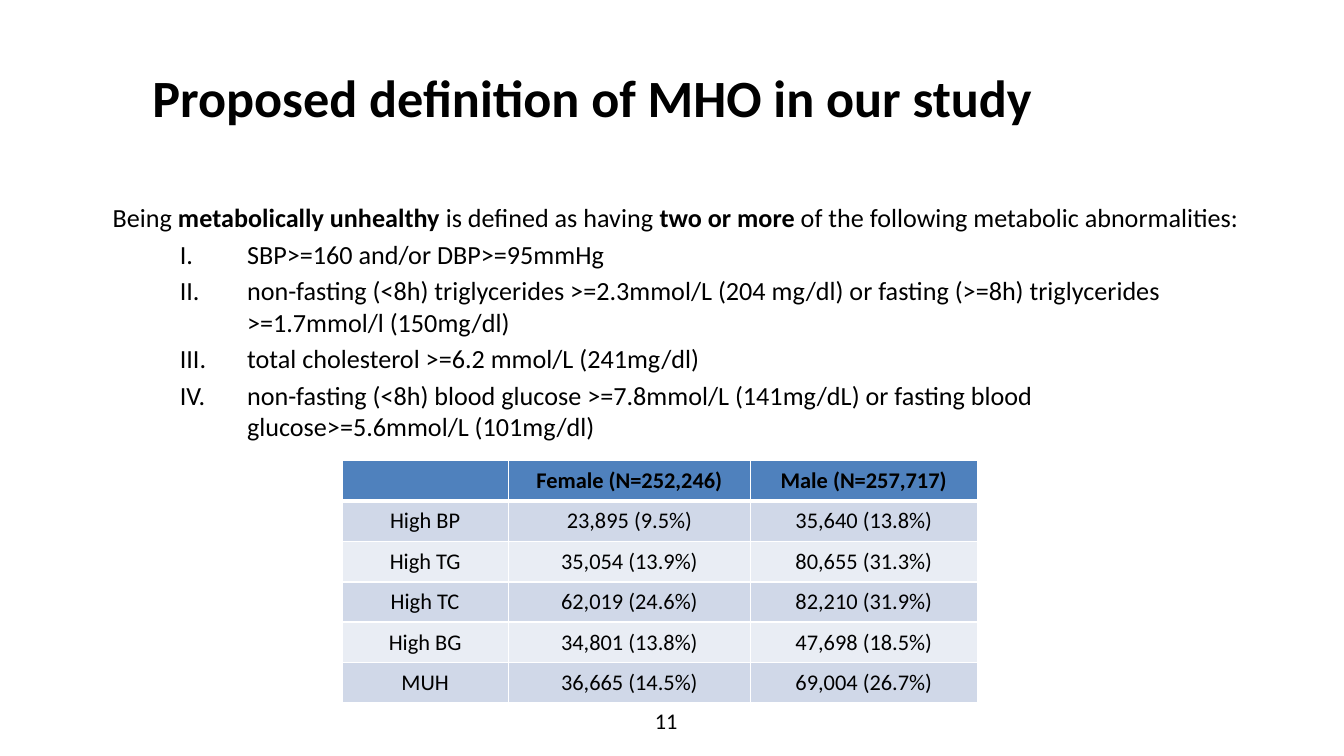
from dataclasses import dataclass

from pptx import Presentation
from pptx.dml import color as col
from pptx.enum import text as t
from pptx.oxml import ns, xmlchemy as xc
from pptx.util import Cm, Pt


@dataclass(frozen=True)
class Theme:
    face: str = "Calibri"
    ink: str = "000000"
    line: str = "FFFFFF"
    head: str = "4F81BD"
    bands: tuple = ("D0D8E8", "E9EDF4")
    title: int = 28
    body: int = 14
    small: int = 12


THEME = Theme()

LEAD = [
    ("Being ", False),
    ("metabolically unhealthy", True),
    (" is defined as having ", False),
    ("two or more", True),
    (" of the following metabolic abnormalities:", False),
]
RULES = [
    "SBP>=160 and/or DBP>=95mmHg",
    "non-fasting (<8h) triglycerides >=2.3mmol/L (204 mg/dl) or fasting "
    "(>=8h) triglycerides >=1.7mmol/l (150mg/dl)",
    "total cholesterol >=6.2 mmol/L (241mg/dl)",
    "non-fasting (<8h) blood glucose >=7.8mmol/L (141mg/dL) or fasting blood "
    "glucose>=5.6mmol/L (101mg/dl)",
]
ROWS = [
    ("", "Female (N=252,246)", "Male (N=257,717)"),
    ("High BP", "23,895 (9.5%)", "35,640 (13.8%)"),
    ("High TG", "35,054 (13.9%)", "80,655 (31.3%)"),
    ("High TC", "62,019 (24.6%)", "82,210 (31.9%)"),
    ("High BG", "34,801 (13.8%)", "47,698 (18.5%)"),
    ("MUH", "36,665 (14.5%)", "69,004 (26.7%)"),
]


def cms(*box):
    return [Cm(n) for n in box]


def style(font, size, bold=False):
    font.name = THEME.face
    font.size = Pt(size)
    font.bold = bold
    font.color.rgb = col.RGBColor.from_string(THEME.ink)


def add_child(node, tag, **attrs):
    kid = xc.OxmlElement(tag)
    for key, val in attrs.items():
        kid.set(key, str(val))
    node.append(kid)
    return kid


def add_title(slide, box):
    shape = slide.shapes.title
    shape.left, shape.top, shape.width, shape.height = cms(*box)
    frame = shape.text_frame
    frame.text = "Proposed definition of MHO in our study"
    frame.vertical_anchor = t.MSO_ANCHOR.MIDDLE
    para = frame.paragraphs[0]
    para.alignment = t.PP_ALIGN.CENTER
    style(para.runs[0].font, THEME.title, True)


def add_rules(slide, box):
    frame = slide.shapes.add_textbox(*cms(*box)).text_frame
    frame.word_wrap = True

    # Lead sentence with bold terms
    para = frame.paragraphs[0]
    for words, bold in LEAD:
        run = para.add_run()
        run.text = words
        style(run.font, THEME.body, bold)

    # Roman numbered list
    for rule in RULES:
        para = frame.add_paragraph()
        para.text = rule
        para.level = 1
        para.space_before = Pt(THEME.body * 0.2)
        props = para._p.get_or_add_pPr()
        props.set("marL", str(Cm(2.54)))
        props.set("indent", str(Cm(-1.27)))
        add_child(props, "a:buFont", typeface="+mj-lt")
        add_child(props, "a:buAutoNum", type="romanUcPeriod")
        style(para.runs[0].font, THEME.body)


def add_edges(cell, row):
    props = cell._tc.get_or_add_tcPr()
    thick = {0: "a:lnB", 1: "a:lnT"}.get(row)
    for tag in ("a:lnL", "a:lnR", "a:lnT", "a:lnB"):
        edge = add_child(props, tag, w=Pt(3 if tag == thick else 1))
        fill = add_child(edge, "a:solidFill")
        add_child(fill, "a:srgbClr", val=THEME.line)


def add_counts(slide, box, widths):
    grid = slide.shapes.add_table(len(ROWS), len(widths), *cms(*box)).table
    for part, width in zip(grid.columns, widths):
        part.width = Cm(width)
    for r, row in enumerate(ROWS):
        grid.rows[r].height = Cm(box[3] / len(ROWS))
        tint = THEME.bands[(r - 1) % 2] if r else THEME.head
        for c, words in enumerate(row):
            cell = grid.cell(r, c)
            add_edges(cell, r)
            cell.fill.solid()
            cell.fill.fore_color.rgb = col.RGBColor.from_string(tint)
            cell.vertical_anchor = t.MSO_ANCHOR.MIDDLE
            para = cell.text_frame.paragraphs[0]
            para.alignment = t.PP_ALIGN.CENTER
            if words:
                para.text = words
                style(para.runs[0].font, THEME.small, r == 0)
            else:
                # Keeps the empty corner from stretching its row
                end = add_child(para._p, "a:endParaRPr")
                end.set("sz", str(THEME.small * 100))


def add_number(slide, box):
    frame = slide.shapes.add_textbox(*cms(*box)).text_frame
    frame.word_wrap = True
    frame.vertical_anchor = t.MSO_ANCHOR.MIDDLE
    para = frame.paragraphs[0]
    para.text = "11"
    para.alignment = t.PP_ALIGN.CENTER
    style(para.runs[0].font, THEME.small)


def main():
    deck = Presentation()
    deck.slide_width, deck.slide_height = cms(25.4, 14.28)
    slide = deck.slides.add_slide(deck.slide_layouts[5])
    add_title(slide, (1.9, 0.28, 18.57, 3.07))
    add_number(slide, (9.63, 13.23, 5.92, 0.76))
    add_rules(slide, (1.88, 3.68, 21.8, 6.15))
    add_counts(slide, (6.46, 8.7, 12.01, 4.58), (3.15, 4.57, 4.29))
    deck.save("out.pptx")


if __name__ == "__main__":
    main()
